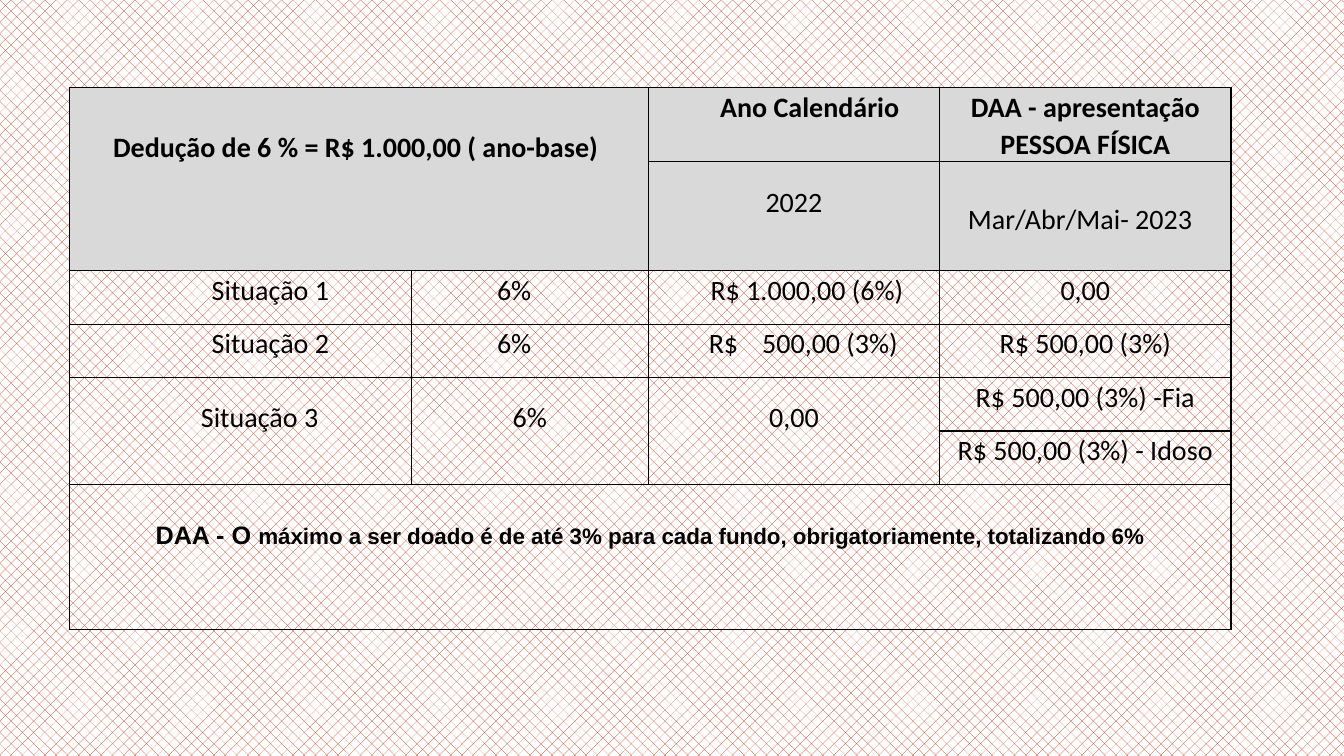
import pptx
import pptx.util
import pptx.dml.color
import pptx.enum.dml
import pptx.enum.text
from lxml import etree

Inches = pptx.util.Inches
Pt = pptx.util.Pt
ALIGN = pptx.enum.text.PP_ALIGN
COLORS = {"ink": "000000", "head": "D9D9D9", "hatch": "C73109", "paper": "FFFFFF"}
NS = "http://schemas.openxmlformats.org/drawingml/2006/main"


def color(name):
    return pptx.dml.color.RGBColor.from_string(COLORS[name])


class Deck:
    def __init__(self, font, size):
        self.font, self.size = font, size
        self.show = pptx.Presentation()
        self.show.slide_width = Inches(13.33)
        self.show.slide_height = Inches(7.5)
        self.slide = self.show.slides.add_slide(self.show.slide_layouts[6])

    def hatch(self):
        fill = self.slide.background.fill
        fill.patterned()
        fill.pattern = pptx.enum.dml.MSO_PATTERN.PERCENT_25
        fill.fore_color.rgb = color("hatch")
        fill.back_color.rgb = color("paper")

    def table(self, left, top, cols, rows, heads):
        frame = self.slide.shapes.add_table(
            len(rows), len(cols), Inches(left), Inches(top),
            Inches(sum(cols)), Inches(sum(rows)))
        grid = frame.table
        grid.first_row = grid.horz_banding = False
        for col, width in zip(grid.columns, cols):
            col.width = Inches(width)
        for i, (row, height) in enumerate(zip(grid.rows, rows)):
            row.height = Inches(height)
            for cell in row.cells:
                self.border(cell)
                if i < heads:
                    cell.fill.solid()
                    cell.fill.fore_color.rgb = color("head")
                else:
                    cell.fill.background()
        return grid

    def border(self, cell):
        props = cell._tc.get_or_add_tcPr()
        for side in "LRTB":
            line = etree.SubElement(props, f"{{{NS}}}ln{side}", w=str(Pt(1)))
            fill = etree.SubElement(line, f"{{{NS}}}solidFill")
            etree.SubElement(fill, f"{{{NS}}}srgbClr", val=COLORS["ink"])

    def style(self, font, name, size, bold):
        font.name, font.size, font.bold = name, Pt(size), bold
        font.color.rgb = color("ink")

    def text(self, cell, lines, align=ALIGN.CENTER, top=0.03, left=0, right=0,
             bold=False, tab=None):
        cell.margin_left, cell.margin_right = Inches(left), Inches(right)
        cell.margin_top, cell.margin_bottom = Inches(top), 0
        for i, line in enumerate(lines.split("\n")):
            para = cell.text_frame.paragraphs[0] if i == 0 else cell.text_frame.add_paragraph()
            para.alignment = align
            if i:
                para.space_before = Pt(1.8)
            if tab:
                stops = etree.SubElement(para._p.get_or_add_pPr(), f"{{{NS}}}tabLst")
                etree.SubElement(stops, f"{{{NS}}}tab", pos=str(Inches(tab)), algn="l")
            self.style(para.font, self.font, self.size, bold)
            para.add_run().text = line

    def note(self, cell, top, parts):
        cell.margin_left = cell.margin_right = cell.margin_bottom = 0
        cell.margin_top = Inches(top)
        para = cell.text_frame.paragraphs[0]
        para.alignment = ALIGN.CENTER
        for words, size in parts:
            run = para.add_run()
            run.text = words
            self.style(run.font, "Arial", size, True)


def main():
    deck = Deck("Calibri", 20)
    deck.hatch()

    # Grid and merged cells
    grid = deck.table(0.69, 0.87, [3.39, 2.35, 2.89, 2.89],
                      [0.73, 1.08] + [0.53] * 4 + [1.44], heads=2)
    at = grid.cell
    at(0, 0).merge(at(1, 1))
    for col in range(3):
        at(4, col).merge(at(5, col))
    at(6, 0).merge(at(6, 3))

    # Header
    deck.text(at(0, 0), "Dedução de 6 % = R$ 1.000,00 ( ano-base) ", top=0.43, bold=True)
    deck.text(at(0, 2), "Ano Calendário", ALIGN.RIGHT, right=0.4, bold=True)
    deck.text(at(0, 3), "DAA - apresentação\nPESSOA FÍSICA", bold=True)
    deck.text(at(1, 2), "2022", top=0.24)
    deck.text(at(1, 3), "Mar/Abr/Mai- 2023", ALIGN.LEFT, top=0.41, left=0.28)

    # Situations 1 and 2
    for num in (1, 2):
        deck.text(at(num + 1, 0), f"Situação {num}", ALIGN.LEFT, left=1.41)
        deck.text(at(num + 1, 1), "6%", ALIGN.LEFT, left=0.85)
    deck.text(at(2, 2), "R$ 1.000,00 (6%)", ALIGN.RIGHT, right=0.36)
    deck.text(at(2, 3), "0,00")
    deck.text(at(3, 2), "R$\t500,00 (3%)", ALIGN.LEFT, left=0.6, tab=0.53)
    deck.text(at(3, 3), "R$ 500,00 (3%)")

    # Situation 3
    deck.text(at(4, 0), "Situação 3", top=0.23, left=0.38)
    deck.text(at(4, 1), "6%", top=0.23)
    deck.text(at(4, 2), "0,00", top=0.23)
    deck.text(at(4, 3), "R$ 500,00 (3%) -Fia")
    deck.text(at(5, 3), "R$ 500,00 (3%) - Idoso")

    # Closing note
    deck.note(at(6, 0), 0.37, [
        ("DAA - O ", 18),
        ("máximo a ser doado é de até 3% para cada fundo, "
         "obrigatoriamente, totalizando 6%", 16)])

    deck.show.save("out.pptx")


if __name__ == "__main__":
    main()
